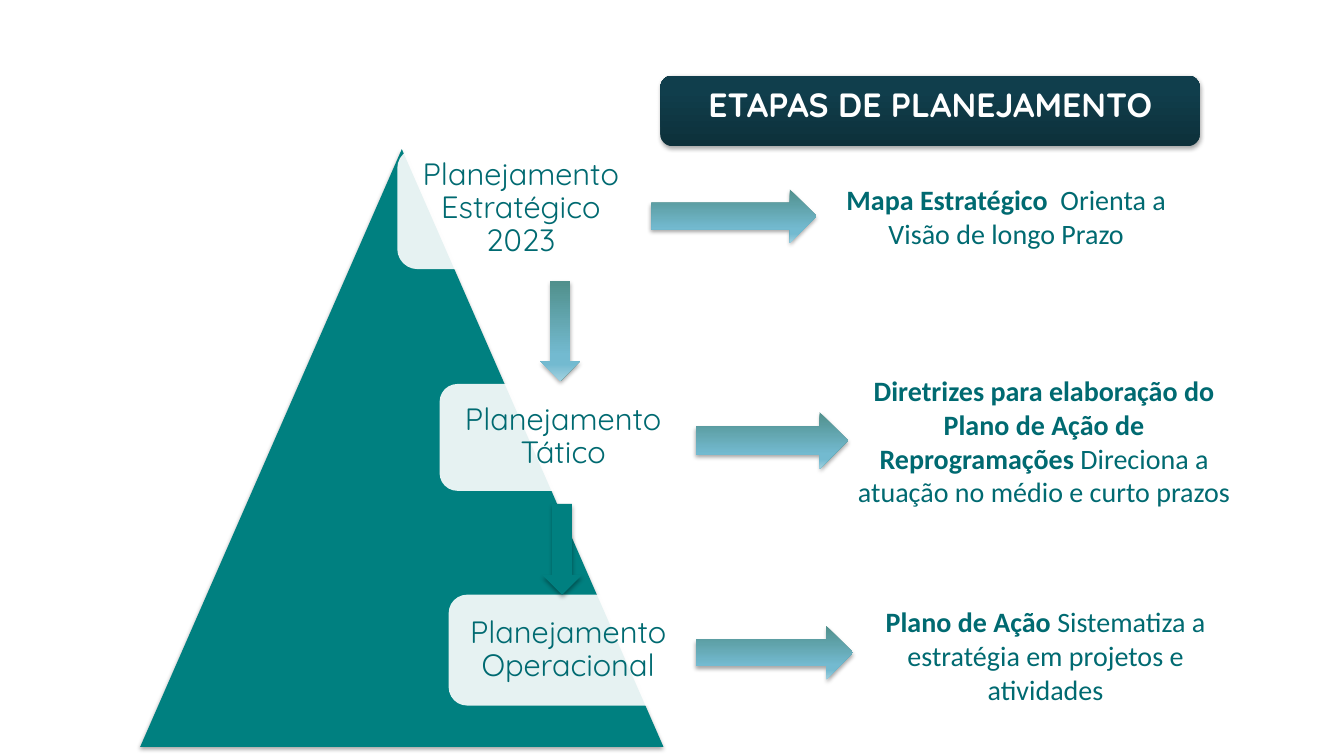
from dataclasses import dataclass

from lxml import etree
from pptx import Presentation
from pptx.dml.color import RGBColor
from pptx.enum import shapes, text
from pptx.oxml import ns
from pptx.util import Inches, Pt


@dataclass(frozen=True)
class Theme:
    teal: str = "008080"
    ink: str = "006A71"
    white: str = "FFFFFF"
    arrow_stops: tuple = ((0, "51908C"), (74, "73BAD0"), (83, "73BAD0"), (100, "A2D1E0"))
    banner_stops: tuple = ((0, "0D303A"), (80, "103E4C"), (100, "0F3F4D"))
    heading_font: str = "Quicksand"
    body_font: str = "Calibri"
    banner_size: int = 24
    stage_size: int = 22
    result_size: int = 20


THEME = Theme()
FORM = shapes.MSO_SHAPE

STAGES = [
    ("Planejamento Estratégico 2023", (3.94, 1.47, 2.45, 1.2)),
    ("Planejamento Tático", (4.36, 3.81, 2.45, 1.06)),
    ("Planejamento Operacional", (4.45, 5.9, 2.37, 1.1)),
]
RESULT_ARROWS = [(6.46, 1.88, 1.64, 0.53), (6.9, 4.09, 1.51, 0.56), (6.9, 6.21, 1.56, 0.53)]
RESULTS = [
    ("Mapa Estratégico ", " Orienta a Visão de longo Prazo", (8.24, 1.77, 3.48, 0.76)),
    ("Diretrizes para elaboração do Plano de Ação de Reprogramações ",
     "Direciona a atuação no médio e curto prazos", (8.35, 3.67, 4.01, 1.43)),
    ("Plano de Ação ", "Sistematiza a estratégia em projetos e atividades",
     (8.38, 5.96, 3.98, 1.09)),
]


def add_node(parent, tag, **attributes):
    node = etree.SubElement(parent, ns.qn(tag))
    for name, value in attributes.items():
        node.set(name, str(value))
    return node


def add_shadow(shape):
    effects = add_node(shape._element.spPr, "a:effectLst")
    shadow = add_node(effects, "a:outerShdw", blurRad=Pt(3.1), dist=Pt(1.8),
                      dir=90 * 60000, rotWithShape=0)
    color = add_node(shadow, "a:srgbClr", val="000000")
    add_node(color, "a:alpha", val=35000)


def fill_gradient(shape, stops, angle):
    shape.fill.gradient()
    gradient = shape._element.spPr.find(ns.qn("a:gradFill"))
    for child in list(gradient):
        gradient.remove(child)
    stop_list = add_node(gradient, "a:gsLst")
    for position, color in stops:
        stop = add_node(stop_list, "a:gs", pos=position * 1000)
        add_node(stop, "a:srgbClr", val=color)
    add_node(gradient, "a:lin", ang=angle * 60000, scaled=0)


def add_form(slide, form, box, color=None, stops=None, angle=90, shadow=True):
    shape = slide.shapes.add_shape(form, *map(Inches, box))
    if stops:
        fill_gradient(shape, stops, angle)
    else:
        shape.fill.solid()
        shape.fill.fore_color.rgb = RGBColor.from_string(color)
    shape.line.fill.background()
    if shadow:
        add_shadow(shape)
    else:
        shape.shadow.inherit = False
    return shape


def set_insets(frame, horizontal, vertical):
    frame.margin_left = frame.margin_right = Inches(horizontal)
    frame.margin_top = frame.margin_bottom = Inches(vertical)


def style_paragraph(paragraph, font_name, size, color):
    paragraph.alignment = text.PP_ALIGN.CENTER
    paragraph.font.name = font_name
    paragraph.font.size = Pt(size)
    paragraph.font.color.rgb = RGBColor.from_string(color)


def add_stage(slide, label, box):
    card = add_form(slide, FORM.ROUNDED_RECTANGLE, box, THEME.white, shadow=False)
    white = card._element.spPr.find(ns.qn("a:solidFill"))[0]
    add_node(white, "a:alpha", val=90000)
    frame = card.text_frame
    set_insets(frame, 0.08, 0.08)
    frame.vertical_anchor = text.MSO_ANCHOR.MIDDLE
    paragraph = frame.paragraphs[0]
    paragraph.text = label
    paragraph.line_spacing = 0.9
    style_paragraph(paragraph, THEME.heading_font, THEME.stage_size, THEME.ink)


def add_result(slide, name, purpose, box):
    frame = slide.shapes.add_textbox(*map(Inches, box)).text_frame
    frame.word_wrap = True
    frame.auto_size = text.MSO_AUTO_SIZE.SHAPE_TO_FIT_TEXT
    set_insets(frame, 0.08, 0.04)
    paragraph = frame.paragraphs[0]
    for words, bold in ((name, True), (purpose, False)):
        run = paragraph.add_run()
        run.text = words
        run.font.bold = bold
    style_paragraph(paragraph, THEME.body_font, THEME.result_size, THEME.ink)


def add_banner(slide, title, box):
    banner = add_form(slide, FORM.ROUNDED_RECTANGLE, box, stops=THEME.banner_stops, angle=270)
    banner.text_frame.vertical_anchor = text.MSO_ANCHOR.TOP
    paragraph = banner.text_frame.paragraphs[0]
    paragraph.text = title
    style_paragraph(paragraph, THEME.heading_font, THEME.banner_size, THEME.white)
    paragraph.font.bold = True


def main():
    deck = Presentation()
    deck.slide_width, deck.slide_height = Inches(13.33), Inches(7.5)
    slide = deck.slides.add_slide(deck.slide_layouts[6])

    add_form(slide, FORM.ISOSCELES_TRIANGLE, (1.39, 1.48, 5.19, 5.93), THEME.teal)
    for label, box in STAGES:
        add_stage(slide, label, box)
    for box in RESULT_ARROWS:
        add_form(slide, FORM.RIGHT_ARROW, box, stops=THEME.arrow_stops)
    for name, purpose, box in RESULTS:
        add_result(slide, name, purpose, box)
    add_form(slide, FORM.DOWN_ARROW, (5.36, 2.79, 0.39, 0.99), stops=THEME.arrow_stops)
    add_form(slide, FORM.DOWN_ARROW, (5.38, 5, 0.39, 0.9), THEME.teal)
    add_banner(slide, "ETAPAS DE PLANEJAMENTO", (6.55, 0.75, 5.35, 0.7))

    deck.save("out.pptx")


if __name__ == "__main__":
    main()
